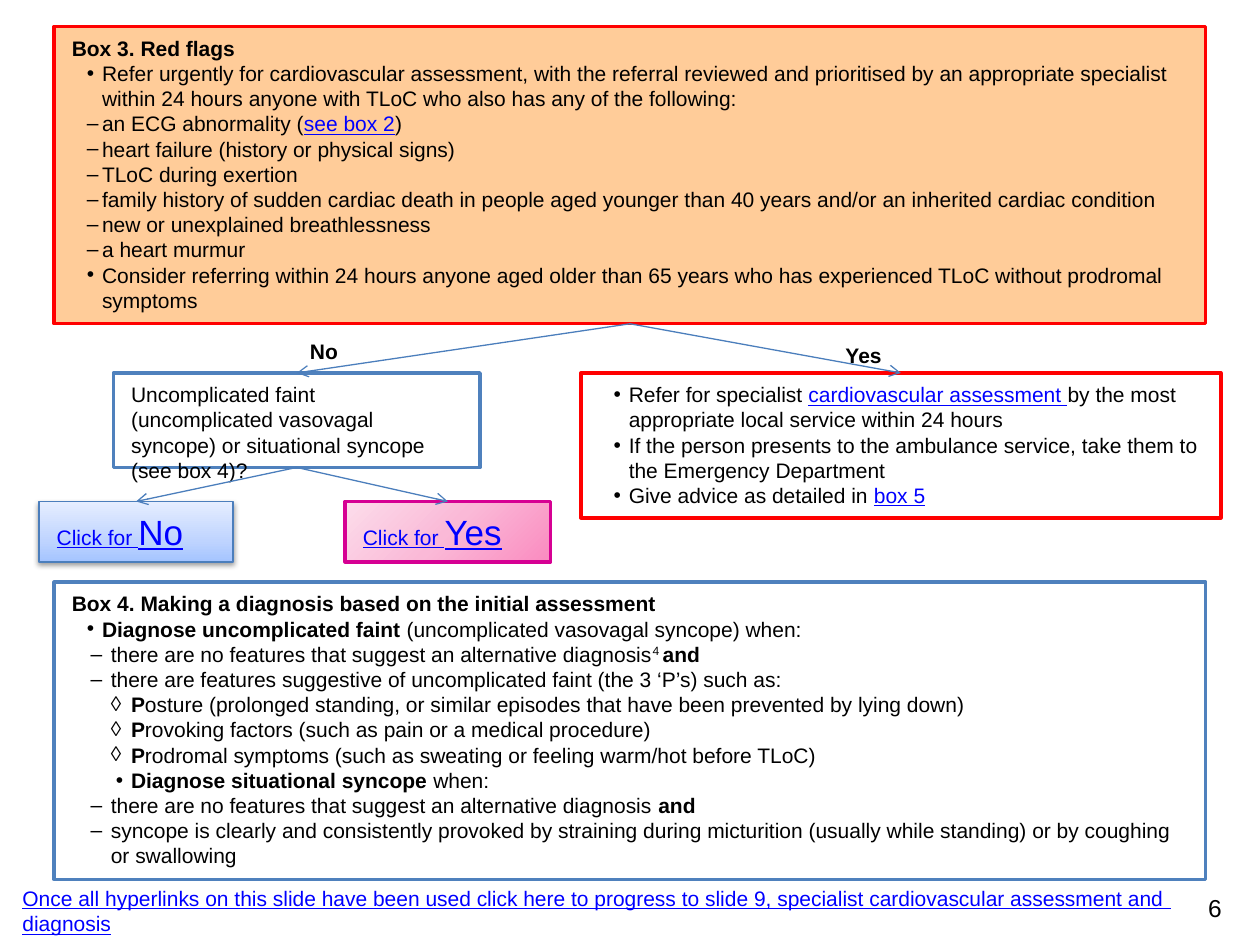
import copy

import pptx
import pptx.dml.color
import pptx.enum.shapes
import pptx.enum.text
import pptx.oxml
import pptx.oxml.ns
import pptx.util

Inches = pptx.util.Inches
qn = pptx.oxml.ns.qn
COLORS = {"text": "000000", "link": "0000FF", "red": "FF0000", "peach": "FFCC99",
          "white": "FFFFFF", "blue": "4F81BD", "arrow": "4B7EBC", "magenta": "D60093"}
PINK_GRADIENT = ([(0, "FA8BC0"), (0.5, "FAB9D7"), (1, "FCDDEB")], 135)
BLUE_GRADIENT = ([(0, "A4C4FF"), (0.35, "BFD4FF"), (1, "E6EEFF")], 90)
BOX_MARGINS = (0.14, 0.07)
TEXT_MARGINS = (0.1, 0.05)

# Paragraph kinds: bullet, left margin, hanging indent
BULLETS = {
    "point": ("•", 0.24, 0.12),
    "dash": ("–", 0.24, 0.12),
    "inner dash": ("–", 0.31, 0.16),
    "diamond": ("◊", 0.47, 0.16),
    "inner point": ("•", 0.47, 0.12),
}

# A paragraph is (kind, run, run, ...); a run is text or (text, style)
RED_FLAGS = [
    ("plain", ("Box 3. Red flags", "bold")),
    ("point", "Refer urgently for cardiovascular assessment, with the referral reviewed and "
              "prioritised by an appropriate specialist within 24 hours anyone with TLoC who "
              "also has any of the following:"),
    ("dash", "an ECG abnormality (", ("see box 2", "link"), ")"),
    ("dash", "heart failure (history or physical signs)"),
    ("dash", "TLoC during exertion"),
    ("dash", "family history of sudden cardiac death in people aged younger than 40 years "
             "and/or an inherited cardiac condition"),
    ("dash", "new or unexplained breathlessness"),
    ("dash", "a heart murmur"),
    ("point", "Consider referring within 24 hours anyone aged older than 65 years who has "
              "experienced TLoC without prodromal symptoms"),
]
REFERRAL = [
    ("point", "Refer for specialist ", ("cardiovascular assessment ", "link"),
     "by the most appropriate local service within 24 hours"),
    ("point", "If the person presents to the ambulance service, take them to the Emergency "
              "Department"),
    ("point", "Give advice as detailed in ", ("box 5", "link")),
]
FAINT = [("plain", "Uncomplicated faint (uncomplicated vasovagal syncope) or situational "
                   "syncope (see box 4)?")]
DIAGNOSIS = [
    ("plain", ("Box 4. Making a diagnosis based on the initial assessment", "bold")),
    ("point", ("Diagnose uncomplicated faint", "bold"),
     " (uncomplicated vasovagal syncope) when:"),
    ("inner dash", "there are no features that suggest an alternative diagnosis",
     ("4 ", "superscript"), ("and", "bold")),
    ("inner dash", "there are features suggestive of uncomplicated faint (the 3 ‘P’s) such as:"),
    ("diamond", ("P", "bold"), "osture (prolonged standing, or similar episodes that have "
                               "been prevented by lying down)"),
    ("diamond", ("P", "bold"), "rovoking factors (such as pain or a medical procedure)"),
    ("diamond", ("P", "bold"), "rodromal symptoms (such as sweating or feeling warm/hot "
                               "before TLoC)"),
    ("inner point", ("Diagnose situational syncope ", "bold"), "when:"),
    ("inner dash", "there are no features that suggest an alternative diagnosis ",
     ("and", "bold")),
    ("inner dash", "syncope is clearly and consistently provoked by straining during "
                   "micturition (usually while standing) or by coughing or swallowing"),
]
# name: position, fill, line colour, line width, paragraphs
BOXES = {
    "red flags": ((0.43, 0.21, 9.14, 2.36), "peach", "red", 2, RED_FLAGS),
    "referral": ((4.61, 2.96, 5.08, 1.15), "white", "red", 2, REFERRAL),
    "faint": ((0.9, 2.96, 2.91, 0.75), "white", "blue", 2, FAINT),
    "diagnosis": ((0.43, 4.62, 9.14, 2.36), "white", "blue", 2, DIAGNOSIS),
    "yes button": ((2.74, 3.98, 1.63, 0.48), PINK_GRADIENT, "magenta", 2,
                   [("plain", ("Click for ", "link"), ("Yes", "big link"))]),
    "no button": ((0.31, 3.98, 1.54, 0.48), BLUE_GRADIENT, "arrow", 0.75,
                  [("plain", ("Click for ", "link"), ("No", "big link"))]),
}
ARROWS = [("red flags", "referral"), ("red flags", "faint"),
          ("faint", "yes button"), ("faint", "no button")]
# position, paragraphs, format
LABELS = [
    ((6.57, 2.65, 0.57, 0.34), [("plain", ("Yes", "bold"))],
     {"margins": BOX_MARGINS, "wrap": False}),
    ((2.32, 2.62, 0.51, 0.34), [("plain", ("No", "bold"))],
     {"margins": BOX_MARGINS, "wrap": False}),
    ((0.08, 6.98, 9.57, 0.51),
     [("plain", ("Once all hyperlinks on this slide have been used click here to progress to "
                 "slide 9, specialist cardiovascular assessment and  diagnosis", "link"))],
     {"margins": TEXT_MARGINS}),
    ((9.49, 7.04, 0.43, 0.34), [("plain", "6")], {"margins": TEXT_MARGINS, "size": 14}),
]


def rgb(name):
    return pptx.dml.color.RGBColor.from_string(COLORS.get(name, name))


def write_text(shape, paragraphs, margins=BOX_MARGINS, wrap=True, size=12):
    frame = shape.text_frame
    frame.word_wrap = wrap
    frame.vertical_anchor = pptx.enum.text.MSO_ANCHOR.TOP
    frame.margin_left = frame.margin_right = Inches(margins[0])
    frame.margin_top = frame.margin_bottom = Inches(margins[1])
    for index, (kind, *runs) in enumerate(paragraphs):
        paragraph = frame.add_paragraph() if index else frame.paragraphs[0]
        paragraph.alignment = pptx.enum.text.PP_ALIGN.LEFT
        if kind in BULLETS:
            add_bullet(paragraph, *BULLETS[kind])
        for item in runs:
            text, style = (item, "") if isinstance(item, str) else item
            run = paragraph.add_run()
            run.text = text
            font = run.font
            font.name = "Arial"
            font.size = pptx.util.Pt(20 if style == "big link" else size)
            font.bold = style == "bold"
            font.underline = "link" in style
            font.color.rgb = rgb("link" if "link" in style else "text")
            if style == "superscript":
                run._r.get_or_add_rPr().set("baseline", "30000")


def add_bullet(paragraph, character, left, hanging):
    properties = paragraph._p.get_or_add_pPr()
    properties.set("marL", str(Inches(left)))
    properties.set("indent", str(-Inches(hanging)))
    pptx.oxml.ns  # namespace map is shared with parse_xml below
    properties.append(make_element(f'<a:buFont {{ns}} typeface="Arial"/>'))
    properties.append(make_element(f'<a:buChar {{ns}} char="{character}"/>'))


def make_element(xml):
    return pptx.oxml.parse_xml(xml.replace("{ns}", pptx.oxml.ns.nsdecls("a")))


def fill_gradient(shape, stops, angle):
    shape.fill.gradient()
    shape.fill.gradient_angle = angle
    stop_list = shape._element.spPr.find(".//" + qn("a:gsLst"))
    stop_list.append(copy.deepcopy(stop_list[-1]))
    for stop, (position, color) in zip(shape.fill.gradient_stops, stops):
        stop.position = position
        stop.color.rgb = rgb(color)


def add_box(slide, position, fill, line, width, paragraphs):
    box = slide.shapes.add_shape(pptx.enum.shapes.MSO_SHAPE.RECTANGLE, *map(Inches, position))
    box.shadow.inherit = False
    if isinstance(fill, str):
        box.fill.solid()
        box.fill.fore_color.rgb = rgb(fill)
    else:
        fill_gradient(box, *fill)
    box.line.color.rgb = rgb(line)
    box.line.width = pptx.util.Pt(width)
    write_text(box, paragraphs)
    return box


def add_shadow(shape):
    shape._element.spPr.find(qn("a:effectLst")).append(make_element(
        f'<a:outerShdw {{ns}} blurRad="{pptx.util.Pt(3.1)}" dist="{pptx.util.Pt(1.6)}" '
        'dir="5400000" rotWithShape="0"><a:srgbClr val="000000">'
        '<a:alpha val="38000"/></a:srgbClr></a:outerShdw>'))


def add_arrow(slide, start, end):
    """Join the bottom of one box to the top of another."""
    arrow = slide.shapes.add_connector(pptx.enum.shapes.MSO_CONNECTOR.STRAIGHT, 0, 0, 0, 0)
    arrow.begin_connect(start, 2)
    arrow.end_connect(end, 0)
    arrow.line.color.rgb = rgb("arrow")
    arrow.line.width = pptx.util.Pt(0.75)
    arrow.line._get_or_add_ln().append(make_element('<a:tailEnd {ns} type="arrow"/>'))
    arrow._element.spPr.append(make_element("<a:effectLst {ns}/>"))


def main():
    presentation = pptx.Presentation()
    presentation.slide_width, presentation.slide_height = Inches(10), Inches(7.5)
    slide = presentation.slides.add_slide(presentation.slide_layouts[6])
    boxes = {name: add_box(slide, *details) for name, details in BOXES.items()}
    add_shadow(boxes["no button"])
    for start, end in ARROWS:
        add_arrow(slide, boxes[start], boxes[end])
    for position, paragraphs, text_format in LABELS:
        label = slide.shapes.add_textbox(*map(Inches, position))
        write_text(label, paragraphs, **text_format)
    presentation.save("out.pptx")


if __name__ == "__main__":
    main()
